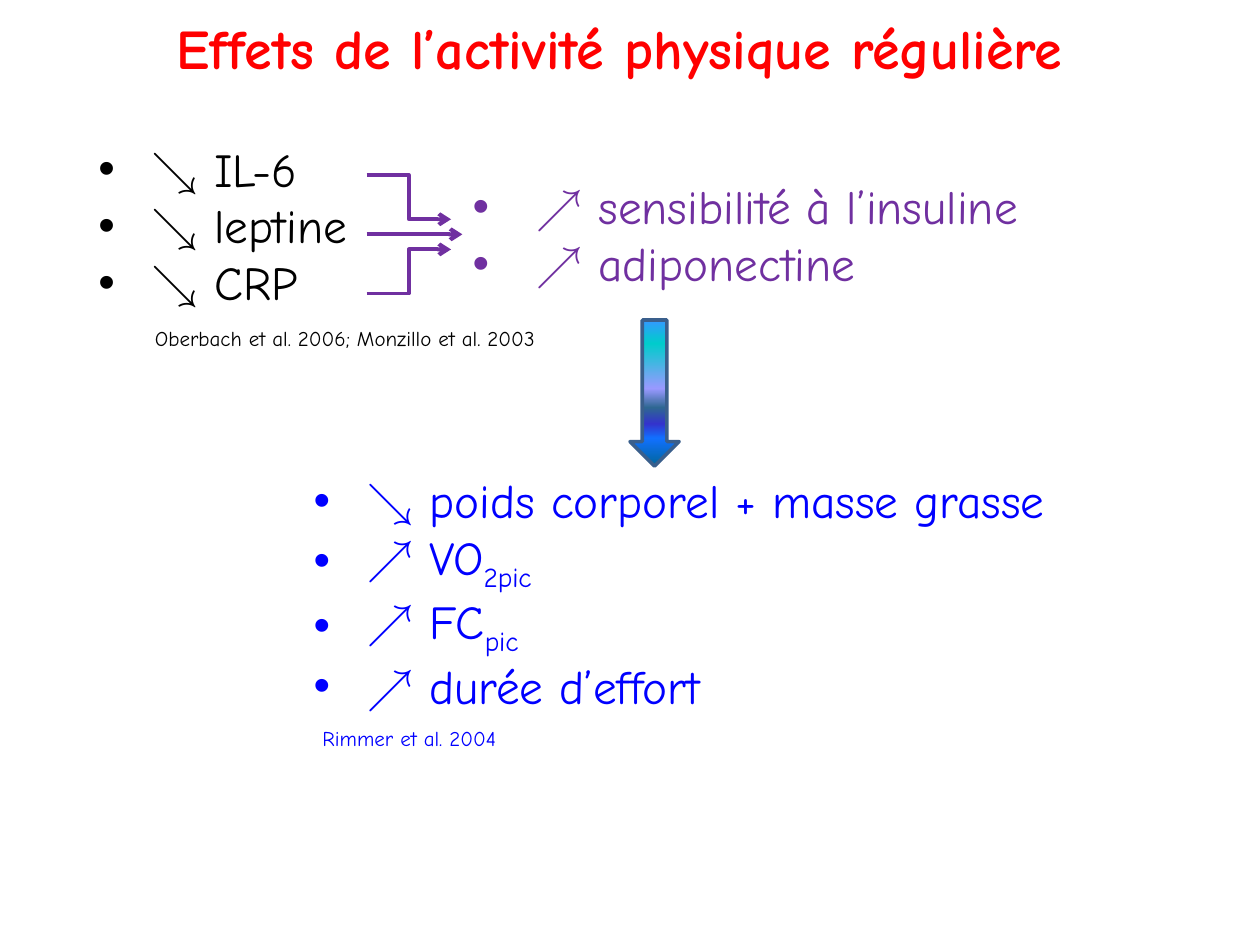
"""Build a slide on the effects of regular physical activity."""
from lxml.etree import SubElement as Sub
from pptx import Presentation
from pptx.dml.color import RGBColor
from pptx.enum.shapes import MSO_CONNECTOR as Link, MSO_SHAPE as Shape
from pptx.enum.text import MSO_AUTO_SIZE as Fit, PP_ALIGN as Align
from pptx.oxml.ns import qn
from pptx.util import Inches, Pt

FONT = "Comic Neue"
BLACK = RGBColor(0x00, 0x00, 0x00)
RED = RGBColor(0xFF, 0x00, 0x00)
PURPLE = RGBColor(0x70, 0x30, 0xA0)
BLUE = RGBColor(0x00, 0x00, 0xFF)
EDGE = RGBColor(0x3A, 0x5F, 0x8C)
STOPS = (
    (0, RGBColor(0x33, 0x99, 0xFF)),
    (16, RGBColor(0x00, 0xCC, 0xCC)),
    (47, RGBColor(0x99, 0x99, 0xFF)),
    (60, RGBColor(0x2E, 0x67, 0x92)),
    (71, RGBColor(0x33, 0x33, 0xCC)),
    (81, RGBColor(0x11, 0x70, 0xFF)),
    (100, RGBColor(0x00, 0x66, 0x99)),
)


def add_text(slide, rows, box, *, size=27, color=BLACK, bold=False,
             align=Align.LEFT, indent=0, pad=(0.08, 0.04)):
    """Add a text box; a row is a string or a (text, subscript) pair."""
    shape = slide.shapes.add_textbox(*map(Inches, box))
    frame = shape.text_frame
    frame.word_wrap = True
    frame.auto_size = Fit.SHAPE_TO_FIT_TEXT
    frame.margin_left = frame.margin_right = Inches(pad[0])
    frame.margin_top = frame.margin_bottom = Inches(pad[1])
    for i, row in enumerate(rows):
        para = frame.paragraphs[0] if i == 0 else frame.add_paragraph()
        para.alignment = align
        if indent:
            add_bullet(para, indent)
        parts = (row,) if isinstance(row, str) else row
        for j, part in enumerate(parts):
            run = para.add_run()
            run.text = part
            font = run.font
            font.name, font.size, font.bold = FONT, Pt(size), bold
            font.color.rgb = color
            if j:
                run._r.get_or_add_rPr().set("baseline", "-25000")
    return shape


def add_bullet(para, indent):
    """Give a paragraph a round bullet and a hanging indent."""
    props = para._p.get_or_add_pPr()
    props.set("marL", str(Inches(indent)))
    props.set("indent", str(-Inches(indent)))
    Sub(props, qn("a:buFont"), typeface="Arial")
    Sub(props, qn("a:buChar"), char="•")


def add_link(slide, kind, start, end):
    """Add a purple connector with an open arrowhead."""
    link = slide.shapes.add_connector(kind, *map(Inches, start + end))
    link.line.color.rgb = PURPLE
    link.line.width = Pt(2.25)
    Sub(link.line._get_or_add_ln(), qn("a:tailEnd"), type="arrow")
    Sub(link._element.spPr, qn("a:effectLst"))
    return link


def add_arrow(slide, box):
    """Add the down arrow with its gradient of several stops."""
    arrow = slide.shapes.add_shape(Shape.DOWN_ARROW, *map(Inches, box))
    arrow.shadow.inherit = False
    arrow.line.color.rgb = EDGE
    arrow.line.width = Pt(2)
    arrow.fill.gradient()
    grad = arrow._element.spPr.find(qn("a:gradFill"))
    for child in list(grad):
        grad.remove(child)
    stops = Sub(grad, qn("a:gsLst"))
    for pos, color in STOPS:
        stop = Sub(stops, qn("a:gs"), pos=str(pos * 1000))
        Sub(stop, qn("a:srgbClr"), val=str(color))
    Sub(grad, qn("a:lin"), ang=str(90 * 60000), scaled="0")


def main():
    """Build and save the slide."""
    deck = Presentation()
    deck.slide_width, deck.slide_height = Inches(10), Inches(7.5)
    slide = deck.slides.add_slide(deck.slide_layouts[6])

    add_text(slide, ["Effets de l’activité physique régulière"],
             (0.59, 0.06, 8.66, 0.65), size=32, color=RED, bold=True,
             align=Align.CENTER, pad=(0.1, 0.05))
    add_text(slide, ["↘ IL-6", "↘ leptine", "↘ CRP"],
             (0.7, 1.07, 2.22, 1.93), indent=0.42)
    add_text(slide, ["Oberbach et al. 2006; Monzillo et al. 2003"],
             (1.15, 2.54, 5.8, 0.29), size=12)

    gain = add_text(slide, ["↗ sensibilité à l’insuline", "↗ adiponectine"],
                    (3.67, 1.37, 4.95, 0.98), color=PURPLE, indent=0.5)
    mid = 1.86
    for side in (-1, 1):
        add_link(slide, Link.ELBOW, (2.91, mid + side * 0.47),
                 (3.58, mid + side * 0.12))
    link = add_link(slide, Link.STRAIGHT, (2.91, mid), (3.67, mid))
    link.end_connect(gain, 1)

    add_text(slide, ["↘ poids corporel + masse grasse", ("↗ VO", "2pic"),
                     ("↗ FC", "pic"), "↗ durée d’effort"],
             (2.41, 3.7, 6.29, 2.36), color=BLUE, indent=0.42)
    add_text(slide, ["Rimmer et al. 2004"], (2.48, 5.72, 4.34, 0.29),
             size=12, color=BLUE)
    add_arrow(slide, (5, 2.54, 0.39, 1.16))
    deck.save("out.pptx")


if __name__ == "__main__":
    main()
